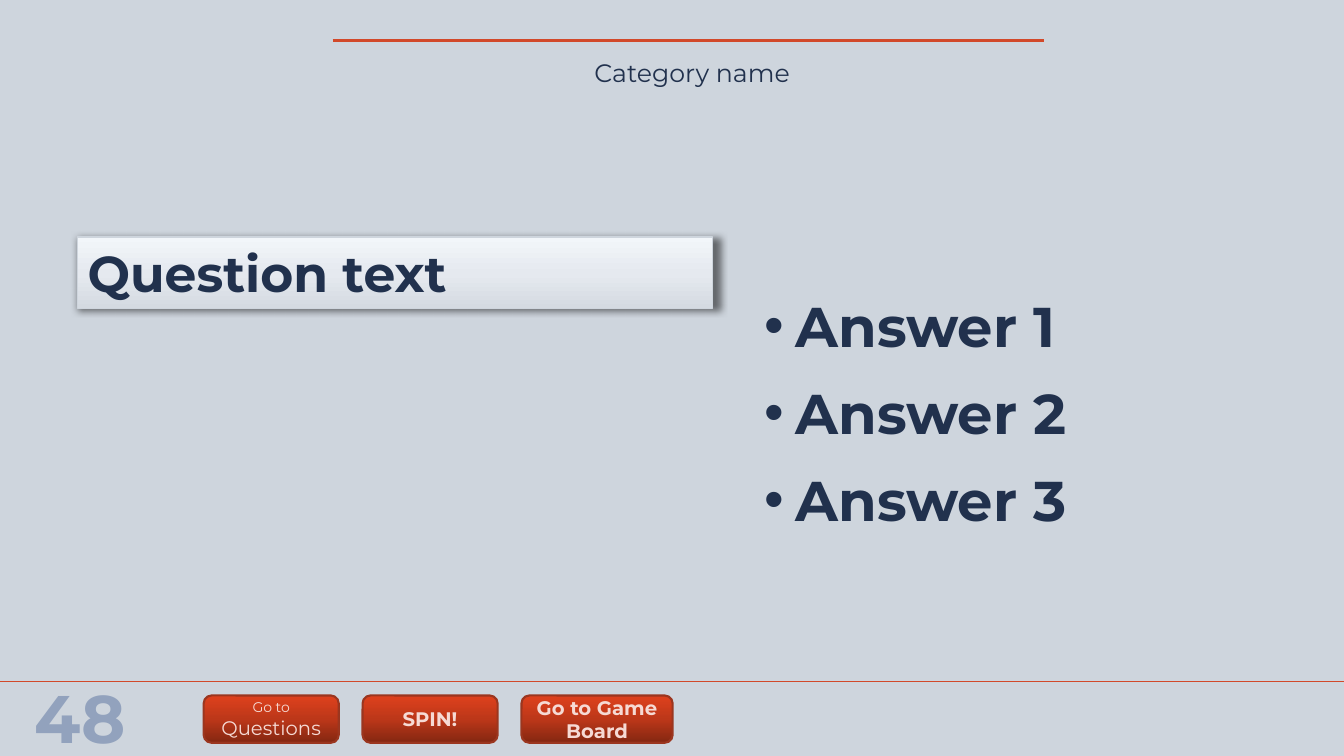
from copy import deepcopy

from lxml import etree
from pptx import Presentation
from pptx.dml.color import RGBColor
from pptx.enum import shapes, text
from pptx.oxml.ns import qn
from pptx.util import Pt

# Content
NUMBER = "48"
CATEGORY = "Category name"
QUESTION = "Question text"
ANSWERS = ["Answer 1", "Answer 2", "Answer 3"]
# Each button: width, then lines of (text, size, bold)
BUTTONS = [
    (96.5, [("Go to", 10, False), ("Questions", 14, False)]),
    (96.5, [("SPIN!", 14, True)]),
    (108, [("Go to Game Board", 14, True)]),
]

# Style
FONT = "Montserrat"
BACKGROUND = RGBColor(0xCE, 0xD5, 0xDD)
NAVY = RGBColor(0x21, 0x31, 0x4D)
SLATE = RGBColor(0x92, 0xA2, 0xBD)
RED = RGBColor(0xD2, 0x49, 0x2A)
BUTTON_EDGE = RGBColor(0x9B, 0x36, 0x1F)
BUTTON_TEXT = RGBColor(0xF6, 0xDA, 0xD4)
BUTTON_STOPS = [(0, RGBColor(0x84, 0x27, 0x11)), (0.5, RGBColor(0xBC, 0x37, 0x19)),
                (1, RGBColor(0xDF, 0x41, 0x1D))]
QUESTION_STOPS = [(0, RGBColor(0xD4, 0xDA, 0xE1)), (0.48, RGBColor(0xE5, 0xE9, 0xEF)),
                  (1, RGBColor(0xF2, 0xF6, 0xFA))]

# Layout
WIDTH, HEIGHT = 960, 540
BUTTON_LEFT, BUTTON_TOP, BUTTON_HEIGHT, BUTTON_GAP = 145.5, 496.8, 33.8, 17
BULLET_INDENT = 22.5

deck = Presentation()
deck.slide_width, deck.slide_height = Pt(WIDTH), Pt(HEIGHT)
page = deck.slides.add_slide(deck.slide_layouts[1])
page.background.fill.solid()
page.background.fill.fore_color.rgb = BACKGROUND


def place(box, left, top, width, height):
    box.left, box.top = Pt(left), Pt(top)
    box.width, box.height = Pt(width), Pt(height)


def prepare(box, anchor=text.MSO_ANCHOR.TOP):
    frame = box.text_frame
    frame.word_wrap = True
    frame.auto_size = text.MSO_AUTO_SIZE.NONE
    frame.vertical_anchor = anchor
    return frame


def add_span(para, words, size, color, bold=False):
    span = para.add_run()
    span.text = words
    span.font.name, span.font.size, span.font.bold = FONT, Pt(size), bold
    span.font.color.rgb = color


def paint(box, stops, edge, weight):
    box.fill.gradient()
    box.fill.gradient_angle = 90
    stop_list = box._element.spPr.find(".//" + qn("a:gsLst"))
    stop_list.append(deepcopy(stop_list[-1]))
    for stop, (position, color) in zip(box.fill.gradient_stops, stops):
        stop.position, stop.color.rgb = position, color
    box.line.color.rgb, box.line.width = edge, Pt(weight)
    box.shadow.inherit = False


def add_rule(left, right, y, weight):
    rule = page.shapes.add_connector(shapes.MSO_CONNECTOR.STRAIGHT,
                                     Pt(left), Pt(y), Pt(right), Pt(y))
    rule.line.color.rgb, rule.line.width = RED, Pt(weight)
    etree.SubElement(rule._element.spPr, qn("a:effectLst"))


def add_label(words, left, top, width, height, size, color, bold=False):
    box = page.shapes.add_textbox(Pt(left), Pt(top), Pt(width), Pt(height))
    para = prepare(box).paragraphs[0]
    para.alignment = text.PP_ALIGN.CENTER
    add_span(para, words, size, color, bold)


# Rules, number and category
add_rule(0, WIDTH, 486.7, 1)
add_rule(237.6, 746, 28.8, 2)
add_label(NUMBER, 15, 479.5, 85, 65.5, 48, SLATE, True)
add_label(CATEGORY, 242, 37.4, 504.7, 29, 18, NAVY)

# Question, with a soft shadow
question = page.shapes.title
place(question, 55.4, 169.2, 453.6, 51.1)
para = prepare(question).paragraphs[0]
para.alignment = text.PP_ALIGN.LEFT
add_span(para, QUESTION, 36, NAVY, True)
paint(question, QUESTION_STOPS, BACKGROUND, 1)
effects = question._element.spPr.find(qn("a:effectLst"))
shadow = etree.SubElement(effects, qn("a:outerShdw"), blurRad=str(Pt(5)), dist=str(Pt(1)),
                          dir="5400000", sx="101000", algn="ctr", rotWithShape="0")
shade = etree.SubElement(shadow, qn("a:srgbClr"), val="000000")
etree.SubElement(shade, qn("a:alpha"), val="50000")

# Answers
answers = page.placeholders[1]
place(answers, 538.6, 190, 378, 190.8)
frame = prepare(answers)
for index, answer in enumerate(ANSWERS):
    para = frame.add_paragraph() if index else frame.paragraphs[0]
    para.line_spacing = 1.3
    para.space_before = para.space_after = Pt(0)
    settings = para._p.get_or_add_pPr()
    settings.set("marL", str(Pt(BULLET_INDENT)))
    settings.set("indent", str(-Pt(BULLET_INDENT)))
    etree.SubElement(settings, qn("a:buFont"), typeface="Arial")
    etree.SubElement(settings, qn("a:buChar"), char="•")
    add_span(para, answer, 40, NAVY, True)

# Buttons
left = BUTTON_LEFT
for width, lines in BUTTONS:
    button = page.shapes.add_shape(shapes.MSO_SHAPE.ROUNDED_RECTANGLE, Pt(left),
                                   Pt(BUTTON_TOP), Pt(width), Pt(BUTTON_HEIGHT))
    paint(button, BUTTON_STOPS, BUTTON_EDGE, 1.5)
    para = prepare(button, text.MSO_ANCHOR.MIDDLE).paragraphs[0]
    para.alignment = text.PP_ALIGN.CENTER
    for index, (words, size, bold) in enumerate(lines):
        if index:
            para.add_line_break()
        add_span(para, words, size, BUTTON_TEXT, bold)
    left += width + BUTTON_GAP

deck.save("out.pptx")
